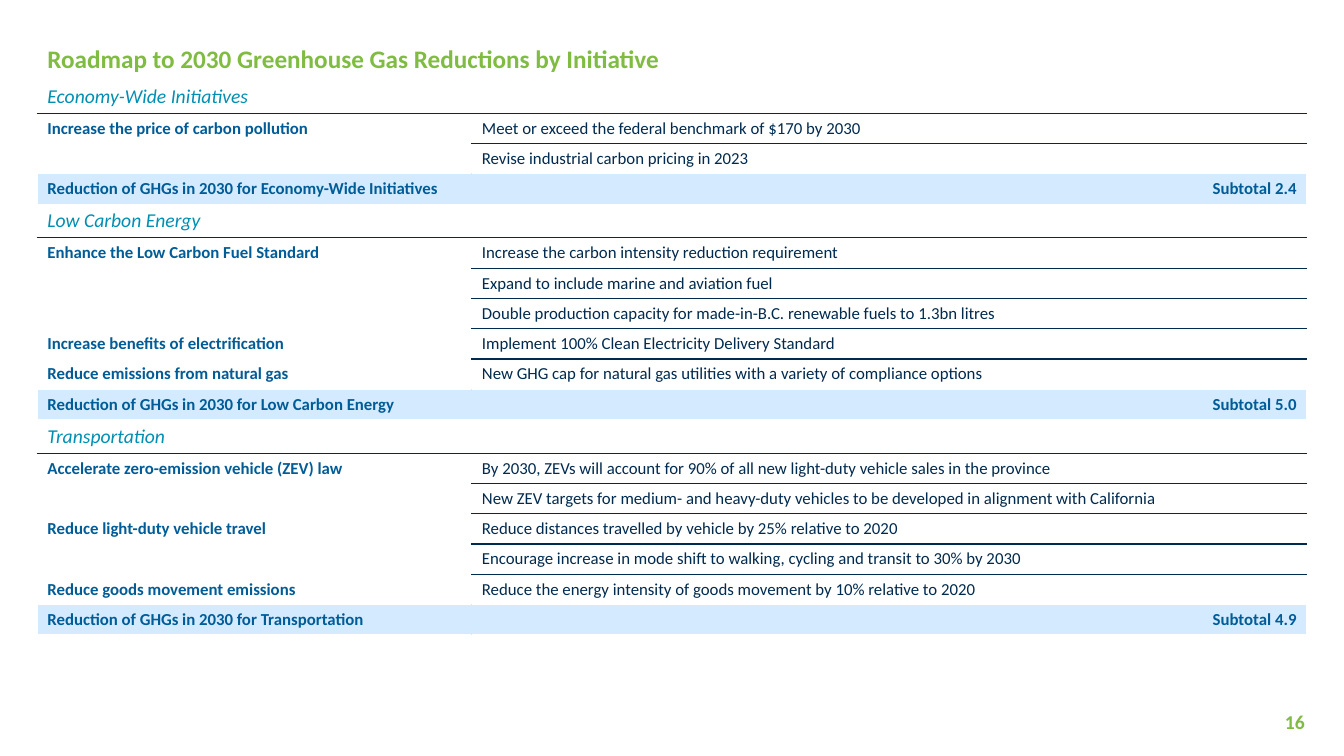
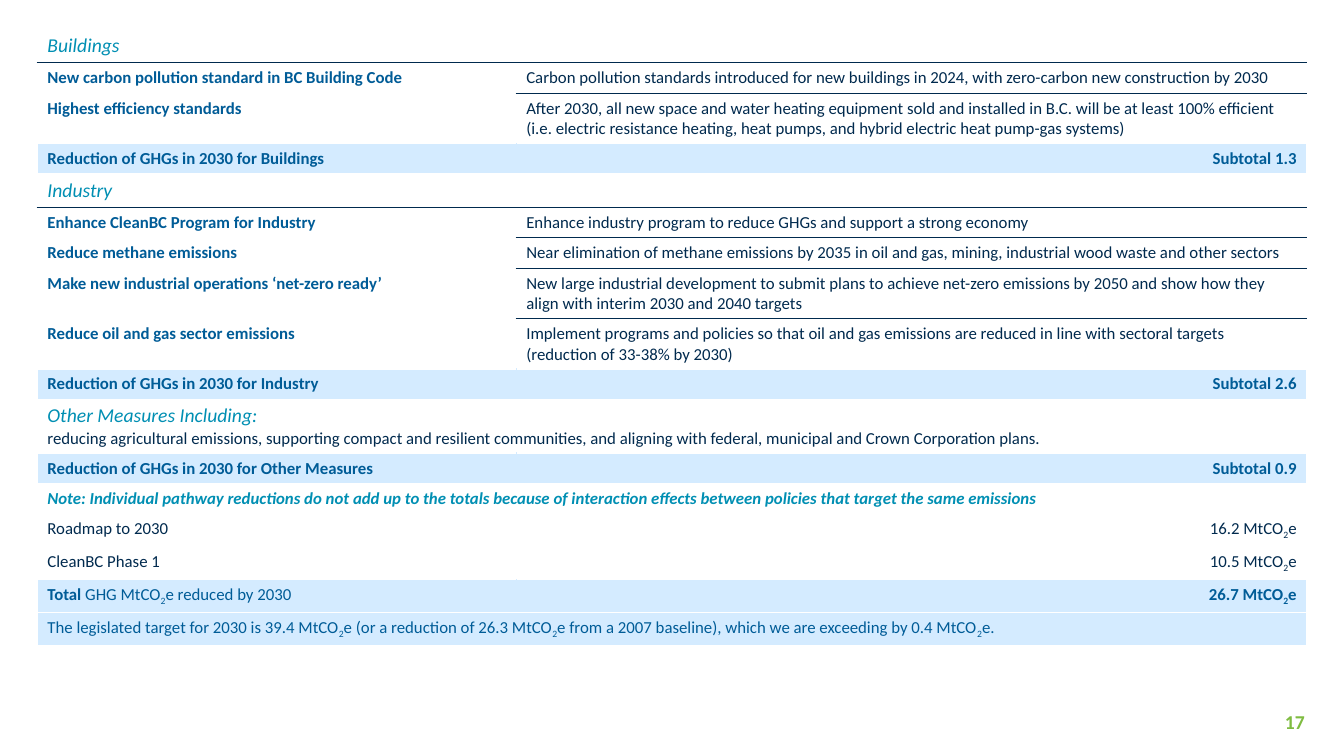
from lxml import etree
from pptx import Presentation
from pptx.dml.color import RGBColor
from pptx.enum.text import MSO_ANCHOR, PP_ALIGN
from pptx.oxml.ns import qn
from pptx.util import Inches, Pt

LEFT, RIGHT = PP_ALIGN.LEFT, PP_ALIGN.RIGHT
MIDDLE = MSO_ANCHOR.MIDDLE

FONT = "Calibri"
GREEN = RGBColor(0x7F, 0xBC, 0x41)
TEAL = RGBColor(0x00, 0x8F, 0xB3)
BLUE = RGBColor(0x00, 0x5C, 0x97)
NAVY = RGBColor(0x00, 0x2A, 0x4E)
PALE_BLUE = RGBColor(0xD4, 0xEB, 0xFF)
WHITE = RGBColor(0xFF, 0xFF, 0xFF)

SLIDE_WIDTH, SLIDE_HEIGHT = 13.33, 7.5
TABLE_LEFT, TABLE_WIDTH = 0.37, 12.59
LEAD_MARK, SUBSCRIPT_TWO = "|", "₂"

TEXT_STYLES = {
    "title": dict(size=18, color=GREEN, bold=True, italic=False),
    "heading": dict(size=14, color=TEAL, bold=False, italic=True),
    "strong": dict(size=12, color=BLUE, bold=True, italic=False),
    "blue": dict(size=12, color=BLUE, bold=False, italic=False),
    "body": dict(size=12, color=NAVY, bold=False, italic=False),
    "note": dict(size=12, color=TEAL, bold=True, italic=True),
}

ROW_KINDS = {
    "title": dict(styles=["title"], fill=WHITE, height=0.38),
    "heading": dict(styles=["heading", "heading"], fill=WHITE, height=0.33),
    "measure": dict(styles=["strong", "body"], fill=WHITE, height=0.29),
    "subtotal": dict(styles=["strong", "strong"], fill=PALE_BLUE, height=0.29),
    "other": dict(styles=["heading"], fill=WHITE, height=0.5),
    "note": dict(styles=["note"], fill=WHITE, height=0.29),
    "amount": dict(styles=["body", "body"], fill=WHITE, height=0.29),
    "total": dict(styles=["blue", "strong"], fill=PALE_BLUE, height=0.29),
    "target": dict(styles=["blue"], fill=PALE_BLUE, height=0.29),
}


def section(name, subtotal, measures):
    return [
        ("heading", name, ""),
        *[("measure", *measure) for measure in measures],
        ("subtotal", f"Reduction of GHGs in 2030 for {name}", f"Subtotal {subtotal}"),
    ]


SLIDES = [
    dict(number=16, top=0.39, first_column=4.31, rows=[
        ("title", "Roadmap to 2030 Greenhouse Gas Reductions by Initiative"),
        *section("Economy-Wide Initiatives", "2.4", [
            ("Increase the price of carbon pollution",
             "Meet or exceed the federal benchmark of $170 by 2030"),
            ("", "Revise industrial carbon pricing in 2023"),
        ]),
        *section("Low Carbon Energy", "5.0", [
            ("Enhance the Low Carbon Fuel Standard",
             "Increase the carbon intensity reduction requirement"),
            ("", "Expand to include marine and aviation fuel"),
            ("", "Double production capacity for made-in-B.C. renewable fuels to 1.3bn litres"),
            ("Increase benefits of electrification",
             "Implement 100% Clean Electricity Delivery Standard"),
            ("Reduce emissions from natural gas",
             "New GHG cap for natural gas utilities with a variety of compliance options"),
        ]),
        *section("Transportation", "4.9", [
            ("Accelerate zero-emission vehicle (ZEV) law",
             "By 2030, ZEVs will account for 90% of all new light-duty vehicle sales in the province"),
            ("", "New ZEV targets for medium- and heavy-duty vehicles to be developed "
                 "in alignment with California"),
            ("Reduce light-duty vehicle travel",
             "Reduce distances travelled by vehicle by 25% relative to 2020"),
            ("", "Encourage increase in mode shift to walking, cycling and transit to 30% by 2030"),
            ("Reduce goods movement emissions",
             "Reduce the energy intensity of goods movement by 10% relative to 2020"),
        ]),
    ]),
    dict(number=17, top=0.29, first_column=4.75, rows=[
        *section("Buildings", "1.3", [
            ("New carbon pollution standard in BC Building Code",
             "Carbon pollution standards introduced for new buildings in 2024, "
             "with zero-carbon new construction by 2030"),
            ("Highest efficiency standards",
             "After 2030, all new space and water heating equipment sold and installed in B.C. "
             "will be at least 100% efficient (i.e. electric resistance heating, heat pumps, "
             "and hybrid electric heat pump-gas systems)"),
        ]),
        *section("Industry", "2.6", [
            ("Enhance CleanBC Program for Industry",
             "Enhance industry program to reduce GHGs and support a strong economy"),
            ("Reduce methane emissions",
             "Near elimination of methane emissions by 2035 in oil and gas, mining, "
             "industrial wood waste and other sectors"),
            ("Make new industrial operations ‘net-zero ready’",
             "New large industrial development to submit plans to achieve net-zero emissions "
             "by 2050 and show how they align with interim 2030 and 2040 targets"),
            ("Reduce oil and gas sector emissions",
             "Implement programs and policies so that oil and gas emissions are reduced in line "
             "with sectoral targets (reduction of 33-38% by 2030)"),
        ]),
        ("other", "Other Measures Including:\n"
                  "reducing agricultural emissions, supporting compact and resilient communities, "
                  "and aligning with federal, municipal and Crown Corporation plans."),
        ("subtotal", "Reduction of GHGs in 2030 for Other Measures", "Subtotal 0.9"),
        ("note", "Note: Individual pathway reductions do not add up to the totals because of "
                 "interaction effects between policies that target the same emissions"),
        ("amount", "Roadmap to 2030", "16.2 MtCO₂e"),
        ("amount", "CleanBC Phase 1", "10.5 MtCO₂e"),
        ("total", "Total |GHG MtCO₂e reduced by 2030", "26.7 MtCO₂e"),
        ("target", "The legislated target for 2030 is 39.4 MtCO₂e (or a reduction of 26.3 MtCO₂e "
                   "from a 2007 baseline), which we are exceeding by 0.4 MtCO₂e."),
    ]),
]


def style_font(font, style):
    font.name = FONT
    font.size = Pt(style["size"])
    font.bold = style["bold"]
    font.italic = style["italic"]
    font.color.rgb = style["color"]


def write_paragraph(paragraph, text, style, alignment):
    paragraph.alignment = alignment
    style_font(paragraph.font, style)
    if not text:
        paragraph._p.get_or_add_endParaRPr().set("sz", str(style["size"] * 100))
        return
    lead, _, rest = text.rpartition(LEAD_MARK)
    if lead:
        run = paragraph.add_run()
        run.text = lead
        run.font.bold = True
    for index, part in enumerate(rest.split(SUBSCRIPT_TWO)):
        if index:
            subscript = paragraph.add_run()
            subscript.text = "2"
            subscript.font._element.set("baseline", "-25000")
        paragraph.add_run().text = part


def set_borders(cell, left, right, top, bottom):
    properties = cell._tc.get_or_add_tcPr()
    for tag, color in (("lnL", left), ("lnR", right), ("lnT", top), ("lnB", bottom)):
        line = etree.SubElement(properties, qn(f"a:{tag}"), w=str(Pt(1)))
        fill = etree.SubElement(line, qn("a:solidFill"))
        etree.SubElement(fill, qn("a:srgbClr"), val=str(color))


def rule_color(kinds, row, column):
    if row < 0 or row + 1 >= len(kinds):
        return WHITE
    between_measures = kinds[row] == kinds[row + 1] == "measure"
    ruled = kinds[row] == "heading" or (column == 1 and between_measures)
    return NAVY if ruled else WHITE


def add_initiative_table(slide, top, first_column, rows):
    kinds = [row[0] for row in rows]
    heights = [ROW_KINDS[kind]["height"] for kind in kinds]
    table = slide.shapes.add_table(
        len(rows), 2, Inches(TABLE_LEFT), Inches(top), Inches(TABLE_WIDTH), Inches(sum(heights))
    ).table
    table.first_row = table.horz_banding = False
    for column, width in zip(table.columns, (first_column, TABLE_WIDTH - first_column)):
        column.width = Inches(width)

    for row_index, (kind, *texts) in enumerate(rows):
        row_kind = ROW_KINDS[kind]
        table.rows[row_index].height = Inches(row_kind["height"])
        if len(texts) == 1:
            table.cell(row_index, 0).merge(table.cell(row_index, 1))
        for column_index in range(2):
            cell = table.cell(row_index, column_index)
            set_borders(
                cell,
                row_kind["fill"] if column_index == 1 else WHITE,
                row_kind["fill"] if column_index == 0 and len(texts) == 2 else WHITE,
                rule_color(kinds, row_index - 1, column_index),
                rule_color(kinds, row_index, column_index),
            )
            cell.fill.solid()
            cell.fill.fore_color.rgb = row_kind["fill"]
        for column_index, (text, style) in enumerate(zip(texts, row_kind["styles"])):
            text_frame = table.cell(row_index, column_index).text_frame
            alignment = RIGHT if column_index and kind != "measure" else LEFT
            for line_index, line in enumerate(text.split("\n")):
                paragraph = text_frame.add_paragraph() if line_index else text_frame.paragraphs[0]
                line_style = "body" if line_index else style
                write_paragraph(paragraph, line, TEXT_STYLES[line_style], alignment)


def add_page_number(slide, number):
    box = slide.shapes.add_textbox(Inches(9.52), Inches(6.96), Inches(3.52), Inches(0.4))
    box.text_frame.word_wrap = True
    box.text_frame.vertical_anchor = MIDDLE
    style = dict(TEXT_STYLES["title"], size=14)
    write_paragraph(box.text_frame.paragraphs[0], str(number), style, RIGHT)


def main():
    presentation = Presentation()
    presentation.slide_width = Inches(SLIDE_WIDTH)
    presentation.slide_height = Inches(SLIDE_HEIGHT)
    blank_layout = presentation.slide_layouts[6]
    for content in SLIDES:
        slide = presentation.slides.add_slide(blank_layout)
        add_page_number(slide, content["number"])
        add_initiative_table(slide, content["top"], content["first_column"], content["rows"])
    presentation.save("out.pptx")


if __name__ == "__main__":
    main()
